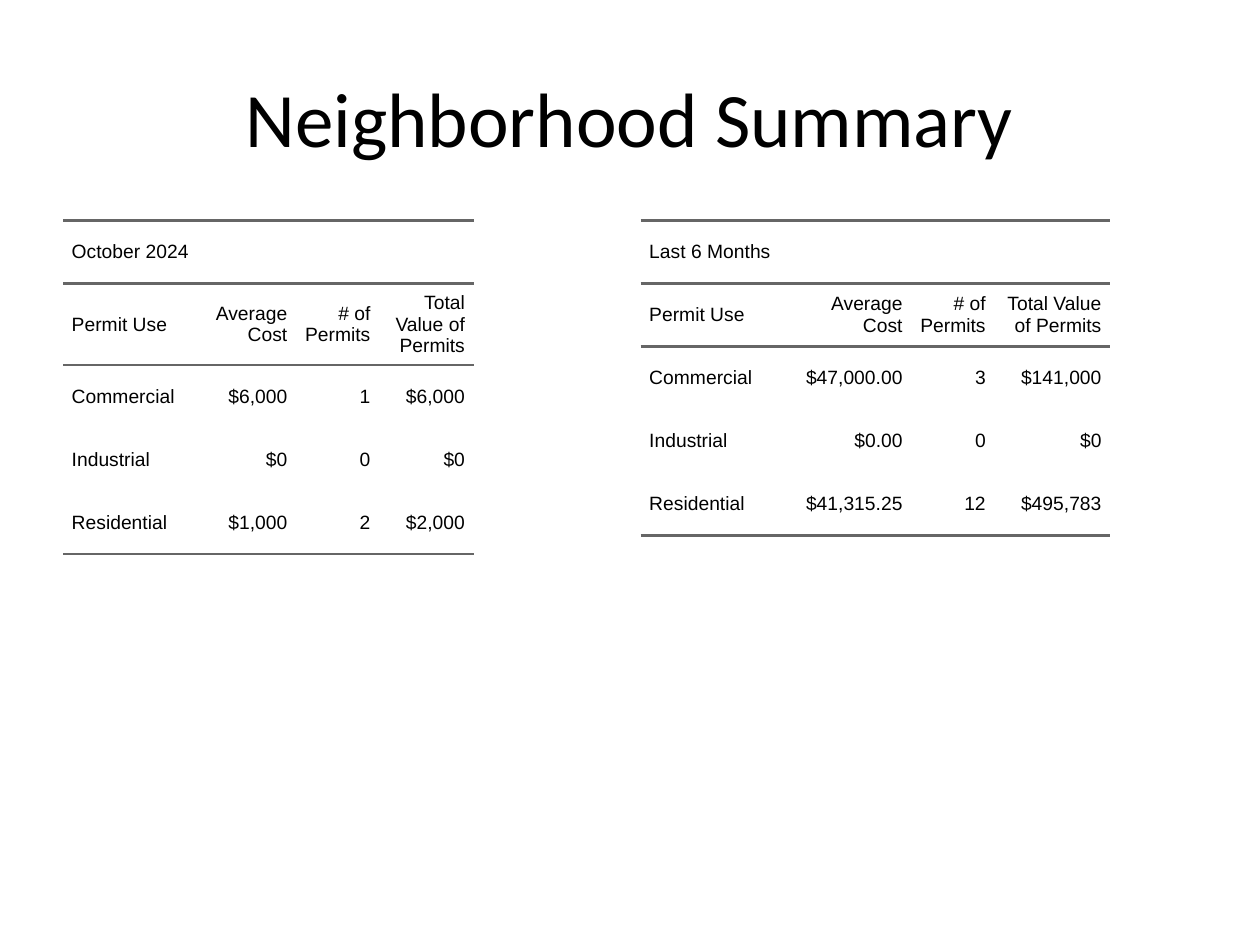
from pptx import Presentation
from pptx.dml.color import RGBColor
from pptx.enum import text as t
from pptx.oxml import parse_xml
from pptx.oxml.ns import nsdecls
from pptx.util import Pt

PAD = Pt(5)
HEAD = ["Permit Use", "Average Cost", "# of Permits", "Total Value of Permits"]
OCTOBER = [
    ["Commercial", "$6,000", "1", "$6,000"],
    ["Industrial", "$0", "0", "$0"],
    ["Residential", "$1,000", "2", "$2,000"],
]
HALF = [
    ["Commercial", "$47,000.00", "3", "$141,000"],
    ["Industrial", "$0.00", "0", "$0"],
    ["Residential", "$41,315.25", "12", "$495,783"],
]


def color(value):
    return RGBColor.from_string(value)


def write(para, words, size, face):
    run = para.add_run()
    run.text = words
    run.font.size = Pt(size)
    run.font.name = face
    run.font.color.rgb = color("000000")


def rule(cell, sides):
    """Draw grey lines on the given sides of a cell and none on the others."""
    props = cell._tc.get_or_add_tcPr()
    for spot, side in enumerate("LRTB"):
        if side in sides:
            width = Pt(1.5)
            paint = '<a:solidFill><a:srgbClr val="666666"/></a:solidFill>'
        else:
            width, paint = 0, "<a:noFill/>"
        line = f'<a:ln{side} {nsdecls("a")} w="{width}">{paint}</a:ln{side}>'
        props.insert(spot, parse_xml(line))


def fill_cell(cell, words, right, sides):
    cell.fill.background()
    cell.vertical_anchor = t.MSO_ANCHOR.MIDDLE
    cell.margin_left = cell.margin_right = 0
    cell.margin_top = cell.margin_bottom = PAD
    para = cell.text_frame.paragraphs[0]
    para.alignment = t.PP_ALIGN.RIGHT if right else t.PP_ALIGN.LEFT
    para.space_before = para.space_after = PAD
    props = para._p.get_or_add_pPr()
    for key in ("marL", "marR"):
        props.set(key, str(PAD))
    props.set("indent", "0")
    if words:
        write(para, words, 11, "Arial")
    rule(cell, sides)


def add_permits(slide, left, widths, label, body):
    rows = [[label, "", "", ""], HEAD] + body
    frame = slide.shapes.add_table(len(rows), len(HEAD), Pt(left), Pt(126),
                                   Pt(sum(widths)), Pt(36 * len(rows)))
    table = frame.table
    table.first_row = table.horz_banding = False
    for col, width in zip(table.columns, widths):
        col.width = Pt(width)
    for r, row in enumerate(rows):
        sides = "TB" if r < 2 else "B" if r == len(rows) - 1 else ""
        if r == 2:
            sides = "T"
        for c, words in enumerate(row):
            fill_cell(table.cell(r, c), words, c > 0, sides)
    table.cell(0, 0).merge(table.cell(0, len(HEAD) - 1))


def add_title(slide, words):
    title = slide.shapes.title
    title.left, title.top = Pt(36), Pt(21.6)
    title.width, title.height = Pt(648), Pt(90)
    frame = title.text_frame
    frame.vertical_anchor = t.MSO_ANCHOR.MIDDLE
    para = frame.paragraphs[0]
    para.alignment = t.PP_ALIGN.CENTER
    write(para, words, 44, "Calibri")


def main():
    deck = Presentation()
    deck.slide_width, deck.slide_height = Pt(720), Pt(540)
    slide = deck.slides.add_slide(deck.slide_layouts[5])
    add_permits(slide, 36, [79.2, 54, 47.5, 54], "October 2024", OCTOBER)
    add_permits(slide, 366, [79.2, 75.6, 47.5, 66.2], "Last 6 Months", HALF)
    add_title(slide, "Neighborhood Summary")
    deck.save("out.pptx")


if __name__ == "__main__":
    main()
